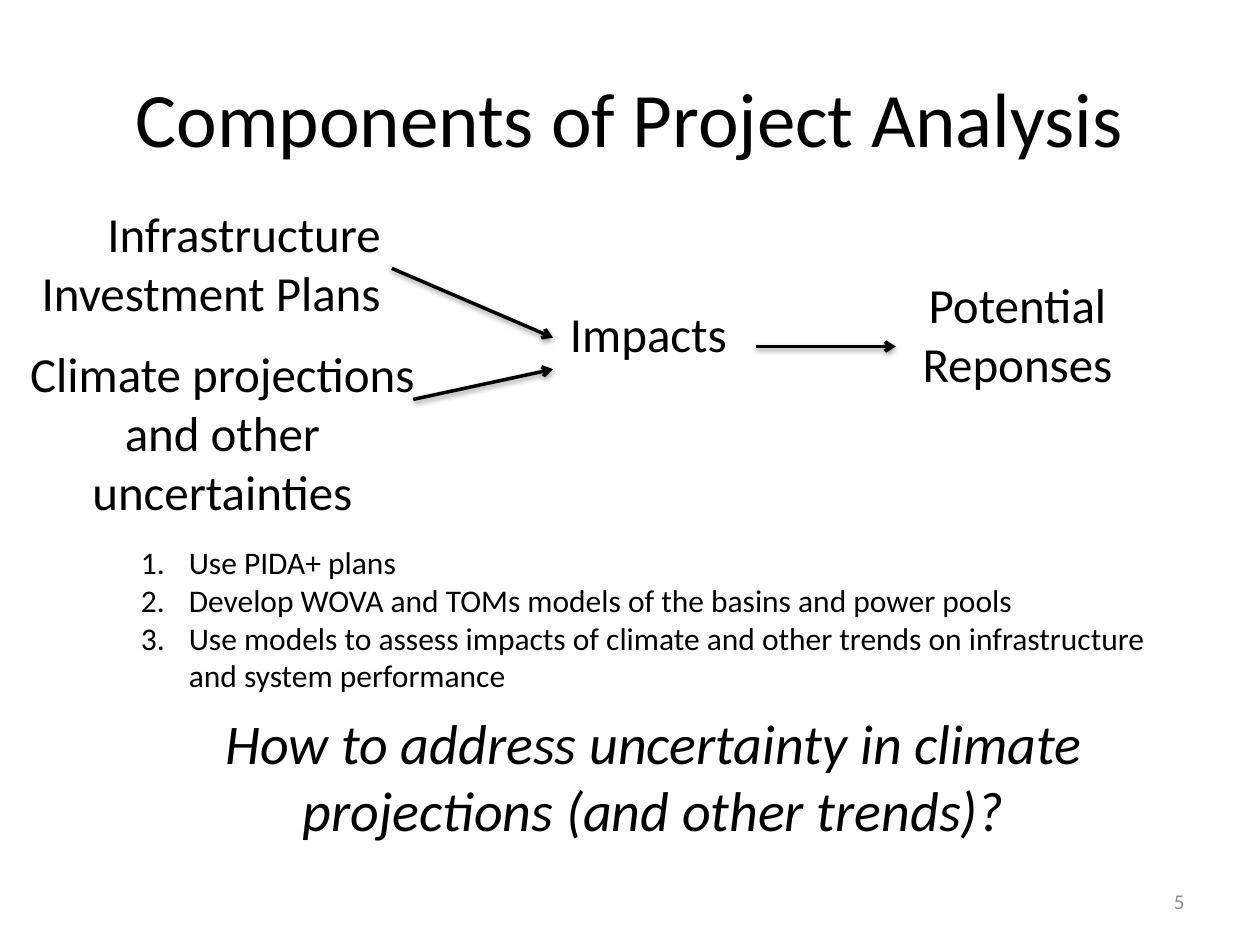
from lxml import etree
from pptx import Presentation
from pptx.dml.color import RGBColor
from pptx.enum.shapes import MSO_CONNECTOR
from pptx.enum.text import MSO_ANCHOR, PP_ALIGN
from pptx.oxml.ns import qn
from pptx.util import Inches, Pt

LEFT, CENTER, RIGHT = PP_ALIGN.LEFT, PP_ALIGN.CENTER, PP_ALIGN.RIGHT
TOP, MIDDLE = MSO_ANCHOR.TOP, MSO_ANCHOR.MIDDLE
STRAIGHT = MSO_CONNECTOR.STRAIGHT

THEME = {
    "font": "Calibri",
    "ink": "000000",
    "muted": "8C8C8C",
    "title": 44,
    "question": 32,
    "label": 28,
    "step": 18,
    "number": 12,
    "line": 2,
}

TITLE = "Components of Project Analysis"
QUESTION = "How to address uncertainty in climate projections (and other trends)?"
SLIDE_NUMBER = "5"
LABELS = [
    ("Infrastructure Investment Plans", (-0.31, 1.57, 3.43, 1.04), RIGHT),
    ("Climate projections and other uncertainties", (0.11, 2.68, 3.31, 1.51), CENTER),
    ("Impacts", (3.94, 2.36, 2.41, 0.57), CENTER),
    ("Potential Reponses", (6.87, 2.13, 2.41, 1.04), CENTER),
]
ARROWS = [
    ((3.11, 2.13), (4.39, 2.68)),
    ((3.28, 3.17), (4.39, 2.93)),
    ((6, 2.75), (7.11, 2.75)),
]
STEPS = [
    "Use PIDA+ plans",
    "Develop WOVA and TOMs models of the basins and power pools",
    "Use models to assess impacts of climate and other trends on infrastructure and system performance",
]


def add_text(slide, lines, box, size, align=CENTER, anchor=TOP, color="ink", italic=False):
    shape = slide.shapes.add_textbox(*map(Inches, box))
    frame = shape.text_frame
    frame.word_wrap = True
    frame.vertical_anchor = anchor
    frame.text = "\n".join(lines)
    for paragraph in frame.paragraphs:
        paragraph.alignment = align
        font = paragraph.font
        font.name = THEME["font"]
        font.size = Pt(THEME[size])
        font.color.rgb = RGBColor.from_string(THEME[color])
        font.italic = italic
    return frame


def number_paragraphs(frame, indent):
    for paragraph in frame.paragraphs:
        properties = paragraph._p.get_or_add_pPr()
        properties.set("marL", str(Inches(indent)))
        properties.set("indent", str(-Inches(indent)))
        bullet = etree.Element(qn("a:buAutoNum"), type="arabicPeriod")
        properties.insert_element_before(bullet, "a:tabLst", "a:defRPr", "a:extLst")


def add_arrow(slide, start, end):
    arrow = slide.shapes.add_connector(STRAIGHT, *map(Inches, start + end))
    arrow.line.color.rgb = RGBColor.from_string(THEME["ink"])
    arrow.line.width = Pt(THEME["line"])
    etree.SubElement(arrow.line._get_or_add_ln(), qn("a:tailEnd"), type="arrow")
    effects = etree.SubElement(arrow._element.spPr, qn("a:effectLst"))
    shadow = etree.SubElement(
        effects, qn("a:outerShdw"), blurRad="40000", dist="20000", dir="5400000", rotWithShape="0"
    )
    color = etree.SubElement(shadow, qn("a:srgbClr"), val=THEME["ink"])
    etree.SubElement(color, qn("a:alpha"), val="38000")


def main():
    presentation = Presentation()
    presentation.slide_width = Inches(10)
    presentation.slide_height = Inches(7.5)
    slide = presentation.slides.add_slide(presentation.slide_layouts[6])

    add_text(slide, [TITLE], (0.5, 0.3, 9, 1.25), "title", anchor=MIDDLE)
    question = add_text(slide, [QUESTION], (1.17, 5.57, 8.04, 1.12), "question", italic=True)
    question.paragraphs[0].space_before = Pt(0.2 * THEME["question"])
    for text, box, align in LABELS:
        add_text(slide, [text], box, "label", align)
    for start, end in ARROWS:
        add_arrow(slide, start, end)
    steps = add_text(slide, STEPS, (1.02, 4.26, 8.28, 1.31), "step", LEFT)
    number_paragraphs(steps, 0.38)
    add_text(slide, [SLIDE_NUMBER], (7.17, 6.95, 2.33, 0.4), "number", RIGHT, MIDDLE, "muted")

    presentation.save("out.pptx")


if __name__ == "__main__":
    main()
